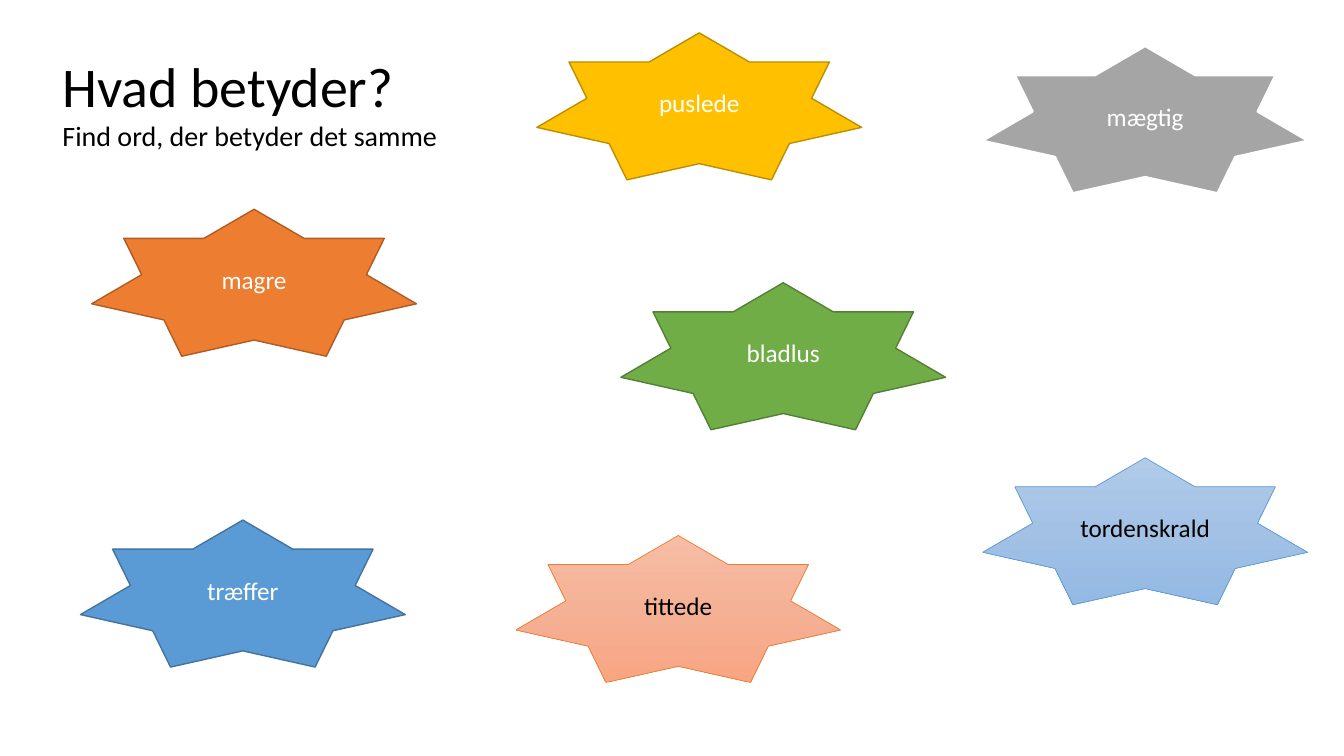
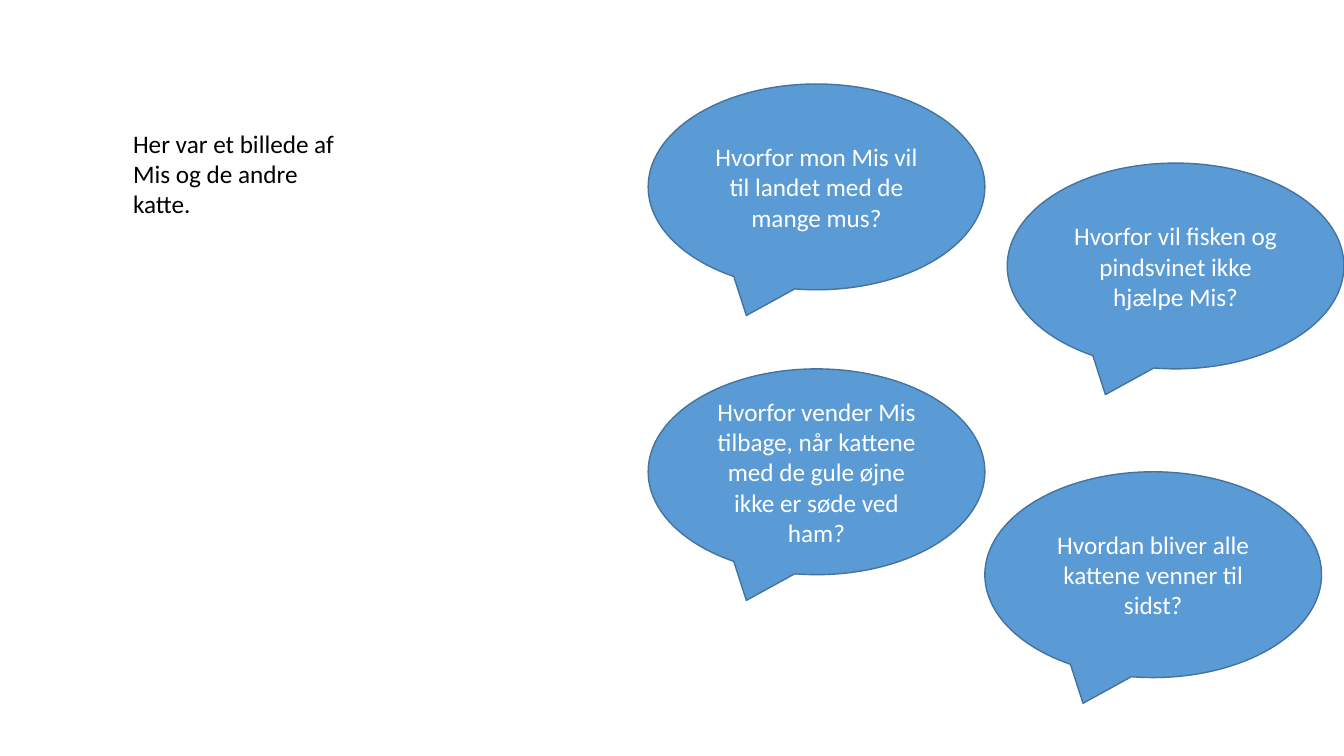
from copy import deepcopy

from pptx import Presentation
from pptx.dml.color import RGBColor
from pptx.enum.shapes import MSO_SHAPE
from pptx.enum.text import MSO_ANCHOR, MSO_AUTO_SIZE, PP_ALIGN
from pptx.oxml.ns import qn
from pptx.util import Pt

STAR = MSO_SHAPE.STAR_7_POINT
BUBBLE = MSO_SHAPE.OVAL_CALLOUT
MIDDLE = MSO_ANCHOR.MIDDLE
CENTER = PP_ALIGN.CENTER
GROW = MSO_AUTO_SIZE.SHAPE_TO_FIT_TEXT

BLACK = RGBColor(0x00, 0x00, 0x00)
WHITE = RGBColor(0xFF, 0xFF, 0xFF)
BLUE = RGBColor(0x5B, 0x9B, 0xD5)
DARK_BLUE = RGBColor(0x43, 0x73, 0x9E)
ORANGE = RGBColor(0xED, 0x7D, 0x31)
DARK_ORANGE = RGBColor(0xAF, 0x5C, 0x24)
GREEN = RGBColor(0x70, 0xAD, 0x47)
DARK_GREEN = RGBColor(0x53, 0x80, 0x35)
GOLD = RGBColor(0xFF, 0xC0, 0x00)
DARK_GOLD = RGBColor(0xBD, 0x8E, 0x00)
GRAY = RGBColor(0xA5, 0xA5, 0xA5)
PALE_BLUES = (RGBColor(0xB1, 0xCB, 0xE9), RGBColor(0xA3, 0xC1, 0xE5),
              RGBColor(0x93, 0xB9, 0xE4))
PALE_ORANGES = (RGBColor(0xF7, 0xBD, 0xA5), RGBColor(0xF5, 0xB1, 0x96),
                RGBColor(0xF8, 0xA5, 0x82))

# word, left, top, fill (three colours make a gradient), outline, outline width
WORDS = [
    ("magre", 65.5, 149.5, ORANGE, DARK_ORANGE, 1),
    ("træffer", 57.5, 371.5, BLUE, DARK_BLUE, 1),
    ("tordenskrald", 702, 327, PALE_BLUES, BLUE, 0.5),
    ("mægtig", 702, 33, GRAY, WHITE, 1.5),
    ("bladlus", 443.5, 202, GREEN, DARK_GREEN, 1),
    ("tittede", 368.5, 382.5, PALE_ORANGES, ORANGE, 0.5),
    ("puslede", 383.5, 23.5, GOLD, DARK_GOLD, 1),
]

QUESTIONS = [
    ("Hvorfor mon Mis vil til landet med de mange mus?", 463, 60),
    ("Hvorfor vil fisken og pindsvinet ikke hjælpe Mis?", 719.5, 116.5),
    ("Hvorfor vender Mis tilbage, når kattene med de gule øjne "
     "ikke er søde ved ham?", 463, 263.5),
    ("Hvordan bliver alle kattene venner til sidst?", 703.5, 337),
]


class Deck:
    FONT = "Calibri"
    BODY_SIZE = 18
    STAR_SIZE = (232, 105)
    BUBBLE_SIZE = (240.5, 147)

    def __init__(self):
        self.presentation = Presentation()
        self.presentation.slide_width = Pt(960)
        self.presentation.slide_height = Pt(540)
        self.slide = None

    def new_slide(self):
        blank = self.presentation.slide_layouts[6]
        self.slide = self.presentation.slides.add_slide(blank)

    def set_text(self, paragraph, text, size, color):
        paragraph.text = text
        for run in paragraph.runs:
            run.font.name = self.FONT
            run.font.size = Pt(size)
            run.font.color.rgb = color

    def text(self, lines, left, top, width, height):
        """Add a text box; each line is a pair of wording and size."""
        box = self.slide.shapes.add_textbox(
            Pt(left), Pt(top), Pt(width), Pt(height))
        frame = box.text_frame
        frame.word_wrap = True
        frame.auto_size = GROW
        for index, (wording, size) in enumerate(lines):
            paragraph = frame.add_paragraph() if index else frame.paragraphs[0]
            self.set_text(paragraph, wording, size, BLACK)

    def figure(self, preset, text, left, top, size, fill, outline, weight=1):
        """Add a preset shape with centred text, dark on a gradient."""
        width, height = size
        shape = self.slide.shapes.add_shape(
            preset, Pt(left), Pt(top), Pt(width), Pt(height))
        shape.shadow.inherit = False
        shape.line.color.rgb = outline
        shape.line.width = Pt(weight)
        if isinstance(fill, tuple) and not isinstance(fill, RGBColor):
            self.shade(shape, fill)
            text_color = BLACK
        else:
            shape.fill.solid()
            shape.fill.fore_color.rgb = fill
            text_color = WHITE
        frame = shape.text_frame
        frame.word_wrap = True
        frame.vertical_anchor = MIDDLE
        paragraph = frame.paragraphs[0]
        paragraph.alignment = CENTER
        self.set_text(paragraph, text, self.BODY_SIZE, text_color)

    def shade(self, shape, colors):
        """Fill from top to bottom with three evenly spaced colours."""
        shape.fill.gradient()
        shape.fill.gradient_angle = 270
        stop_list = next(shape.element.iter(qn("a:gsLst")))
        stop_list.insert(1, deepcopy(stop_list[0]))
        for index, stop in enumerate(shape.fill.gradient_stops):
            stop.position = index / 2
            stop.color.rgb = colors[index]

    def star(self, word, left, top, fill, outline, weight):
        self.figure(STAR, word, left, top, self.STAR_SIZE,
                    fill, outline, weight)

    def bubble(self, question, left, top):
        self.figure(BUBBLE, question, left, top, self.BUBBLE_SIZE,
                    BLUE, DARK_BLUE)


def main():
    deck = Deck()

    deck.new_slide()
    deck.text([("Hvad betyder?", 40), ("Find ord, der betyder det samme", 20)],
              37.5, 33, 865.5, 80)
    for word in WORDS:
        deck.star(*word)

    deck.new_slide()
    for question in QUESTIONS:
        deck.bubble(*question)
    deck.text([("Her var et billede af Mis og de andre katte.",
                deck.BODY_SIZE)], 88, 88, 164, 72.5)

    deck.presentation.save("out.pptx")


if __name__ == "__main__":
    main()
